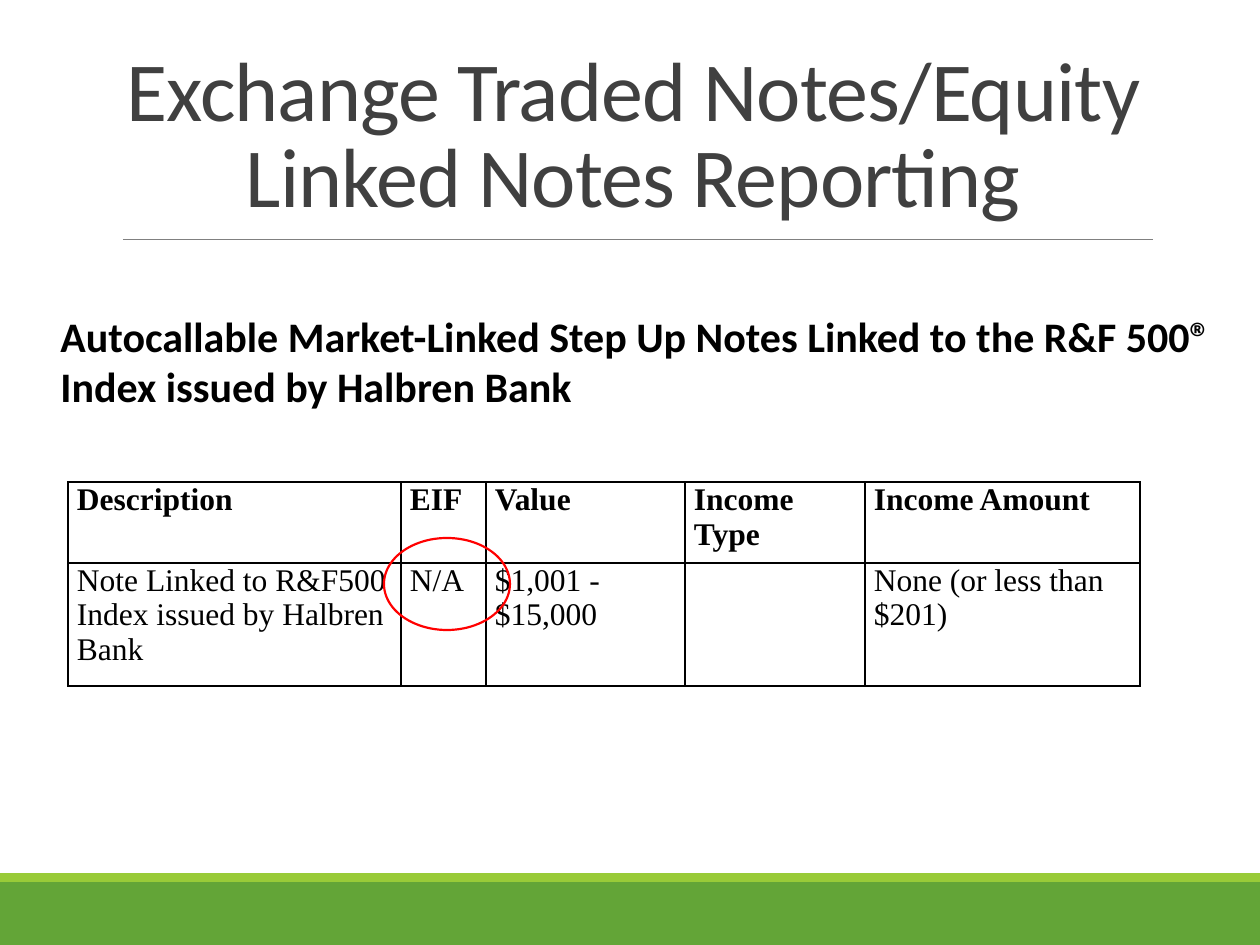
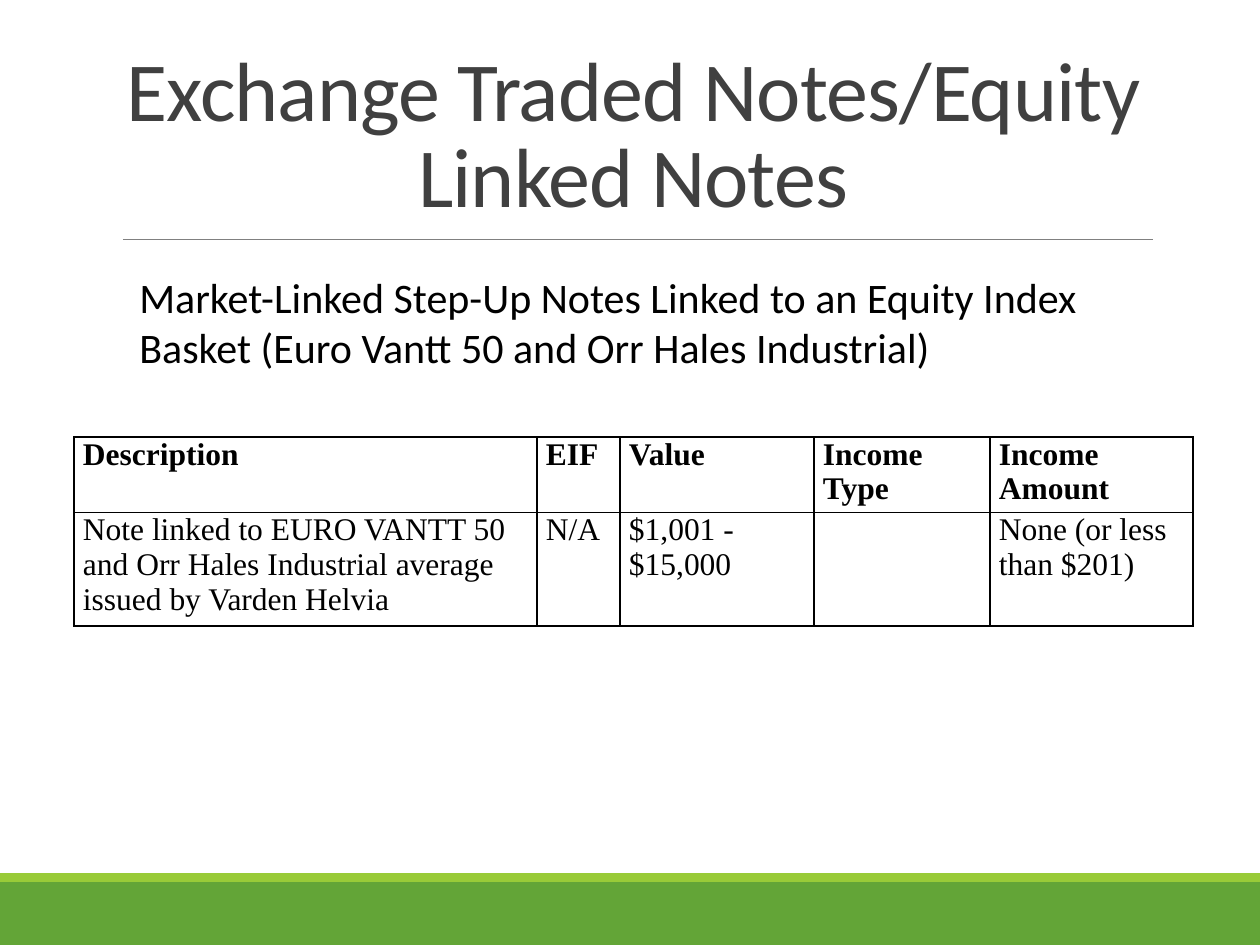
from lxml import etree
from pptx import Presentation
from pptx.dml.color import RGBColor
from pptx.enum.shapes import MSO_CONNECTOR, MSO_SHAPE
from pptx.enum.text import MSO_ANCHOR, MSO_AUTO_SIZE, PP_ALIGN
from pptx.oxml.ns import qn
from pptx.util import Emu, Pt

RECTANGLE = MSO_SHAPE.RECTANGLE
OVAL = MSO_SHAPE.OVAL
STRAIGHT = MSO_CONNECTOR.STRAIGHT
MIDDLE = MSO_ANCHOR.MIDDLE
NO_AUTOFIT = MSO_AUTO_SIZE.NONE
CENTER = PP_ALIGN.CENTER

WHITE = RGBColor(0xFF, 0xFF, 0xFF)
BLACK = RGBColor(0x00, 0x00, 0x00)
TITLE_GRAY = RGBColor(0x40, 0x40, 0x40)
RULE_GRAY = RGBColor(0x80, 0x80, 0x80)
GREEN = RGBColor(0x63, 0xA5, 0x37)
LIME = RGBColor(0x99, 0xCB, 0x38)
RED = RGBColor(0xFF, 0x00, 0x00)

BODY_FONT = "Calibri"
TABLE_FONT = "Times New Roman"
PX_PER_INCH = 126
SLIDE_WIDTH, SLIDE_HEIGHT = 1260, 945
CELL_INSET = 9
HEADINGS = ["Description", "EIF", "Value", "Income Type", "Income Amount"]


def px(length):
    return Emu(round(length * 914400 / PX_PER_INCH))


def box(*lengths):
    return [px(length) for length in lengths]


def format_runs(paragraph, font_name, size, color, bold=False):
    for run in paragraph.runs:
        run.font.name = font_name
        run.font.size = Pt(size)
        run.font.color.rgb = color
        run.font.bold = bold


def add_band(slide, top, height, color):
    band = slide.shapes.add_shape(RECTANGLE, *box(0, top, SLIDE_WIDTH, height))
    band.shadow.inherit = False
    band.fill.solid()
    band.fill.fore_color.rgb = color
    band.line.fill.background()


def add_title_rule(slide):
    rule = slide.shapes.add_connector(STRAIGHT, *box(123, 239, 1153, 239))
    rule.line.color.rgb = RULE_GRAY
    rule.line.width = Pt(0.5)
    etree.SubElement(rule._element.spPr, qn("a:effectLst"))


def set_title(slide, text):
    title = slide.shapes.title
    title.left, title.top, title.width, title.height = box(113, 39, 1040, 200)
    frame = title.text_frame
    frame.text = text
    frame.auto_size = NO_AUTOFIT
    frame.word_wrap = True
    frame.vertical_anchor = MIDDLE
    paragraph = frame.paragraphs[0]
    paragraph.alignment = CENTER
    paragraph.line_spacing = 0.85
    format_runs(paragraph, BODY_FONT, 48, TITLE_GRAY)
    for run in paragraph.runs:
        run.font._element.set("spc", "-50")


def add_note_slide(deck, title):
    slide = deck.slides.add_slide(deck.slide_layouts[5])
    slide.background.fill.solid()
    slide.background.fill.fore_color.rgb = WHITE
    add_band(slide, 882, 63, GREEN)
    add_band(slide, 873, 9, LIME)
    add_title_rule(slide)
    set_title(slide, title)
    return slide


def add_note_name(slide, text, left, top, width, bold=False):
    note_name = slide.shapes.add_textbox(*box(left, top, width, 114))
    frame = note_name.text_frame
    frame.word_wrap = True
    frame.text = text
    format_runs(frame.paragraphs[0], BODY_FONT, 24, BLACK, bold)


def add_borders(cell):
    properties = cell._tc.get_or_add_tcPr()
    for position, side in enumerate(("lnL", "lnR", "lnT", "lnB")):
        border = etree.Element(qn(f"a:{side}"), w=str(Pt(1)))
        fill = etree.SubElement(border, qn("a:solidFill"))
        etree.SubElement(fill, qn("a:srgbClr"), val=str(BLACK))
        properties.insert(position, border)


def fill_cell(cell, text, bold):
    cell.text = text
    cell.margin_left = cell.margin_right = px(CELL_INSET)
    cell.margin_top = cell.margin_bottom = 0
    cell.fill.solid()
    cell.fill.fore_color.rgb = WHITE
    add_borders(cell)
    format_runs(cell.text_frame.paragraphs[0], TABLE_FONT, 18, BLACK, bold)


def add_report_table(slide, left, top, column_widths, row_heights, description):
    holding = [description, "N/A", "$1,001 - $15,000", "", "None (or less than $201)"]
    rows = [HEADINGS, holding]
    report = slide.shapes.add_table(
        len(rows), len(HEADINGS),
        *box(left, top, sum(column_widths), sum(row_heights))).table
    report.first_row = False
    report.horz_banding = False
    for column, width in zip(report.columns, column_widths):
        column.width = px(width)
    for row, height in zip(report.rows, row_heights):
        row.height = px(height)
    for row_index, texts in enumerate(rows):
        for column_index, text in enumerate(texts):
            fill_cell(report.cell(row_index, column_index), text, row_index == 0)


def add_highlight(slide, left, top, width, height):
    highlight = slide.shapes.add_shape(OVAL, *box(left, top, width, height))
    highlight.shadow.inherit = False
    highlight.fill.background()
    highlight.line.color.rgb = RED
    highlight.line.width = Pt(1.25)


def main():
    deck = Presentation()
    deck.slide_width, deck.slide_height = box(SLIDE_WIDTH, SLIDE_HEIGHT)

    step_up = add_note_slide(deck, "Exchange Traded Notes/Equity Linked Notes Reporting")
    add_note_name(
        step_up,
        "Autocallable Market-Linked Step Up Notes Linked to the R&F 500® "
        "Index issued by Halbren Bank",
        48, 304, 1192, bold=True)
    add_report_table(step_up, 68, 482, [333, 85, 199, 180, 275], [81, 123],
                     "Note Linked to R&F500 Index issued by Halbren Bank")
    add_highlight(step_up, 384, 538, 126, 92)

    basket = add_note_slide(deck, "Exchange Traded Notes/Equity Linked Notes")
    add_note_name(
        basket,
        "Market-Linked Step-Up Notes Linked to an Equity Index Basket "
        "(Euro Vantt 50 and Orr Hales Industrial)",
        127, 265, 1043)
    add_report_table(basket, 74, 437, [463, 83, 194, 176, 203], [70, 104],
                     "Note linked to EURO VANTT 50 and Orr Hales Industrial "
                     "average issued by Varden Helvia")

    deck.save("out.pptx")


if __name__ == "__main__":
    main()
